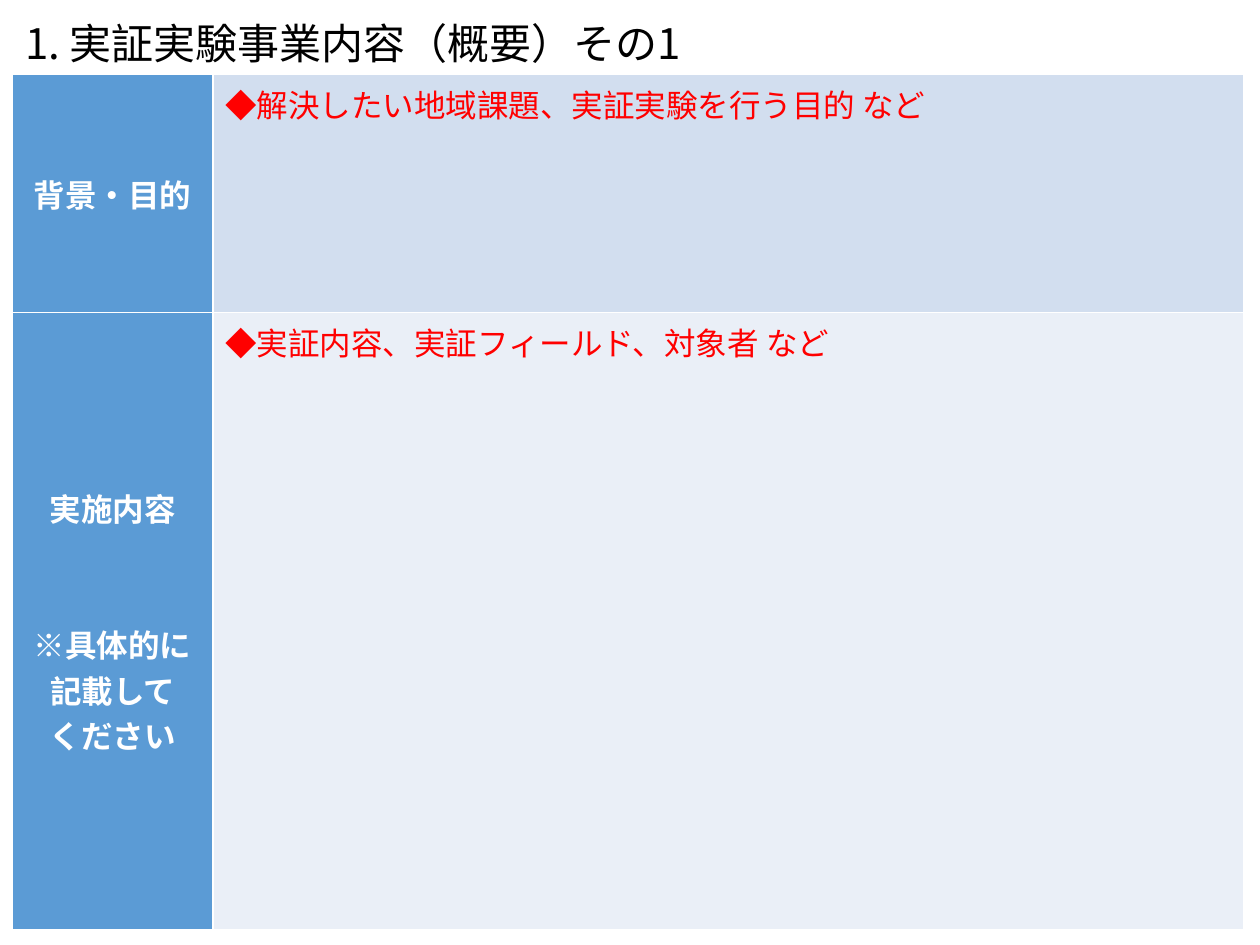
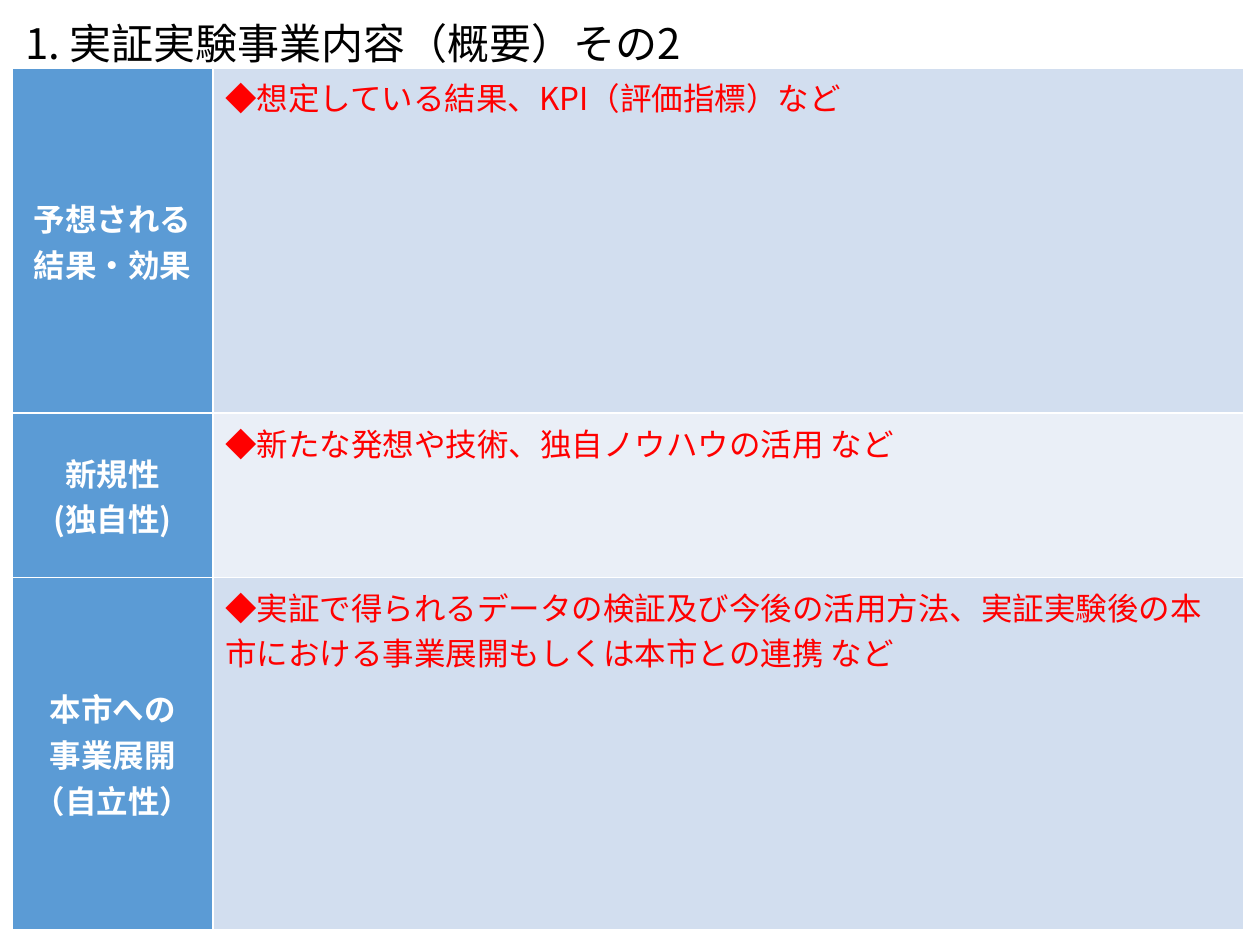
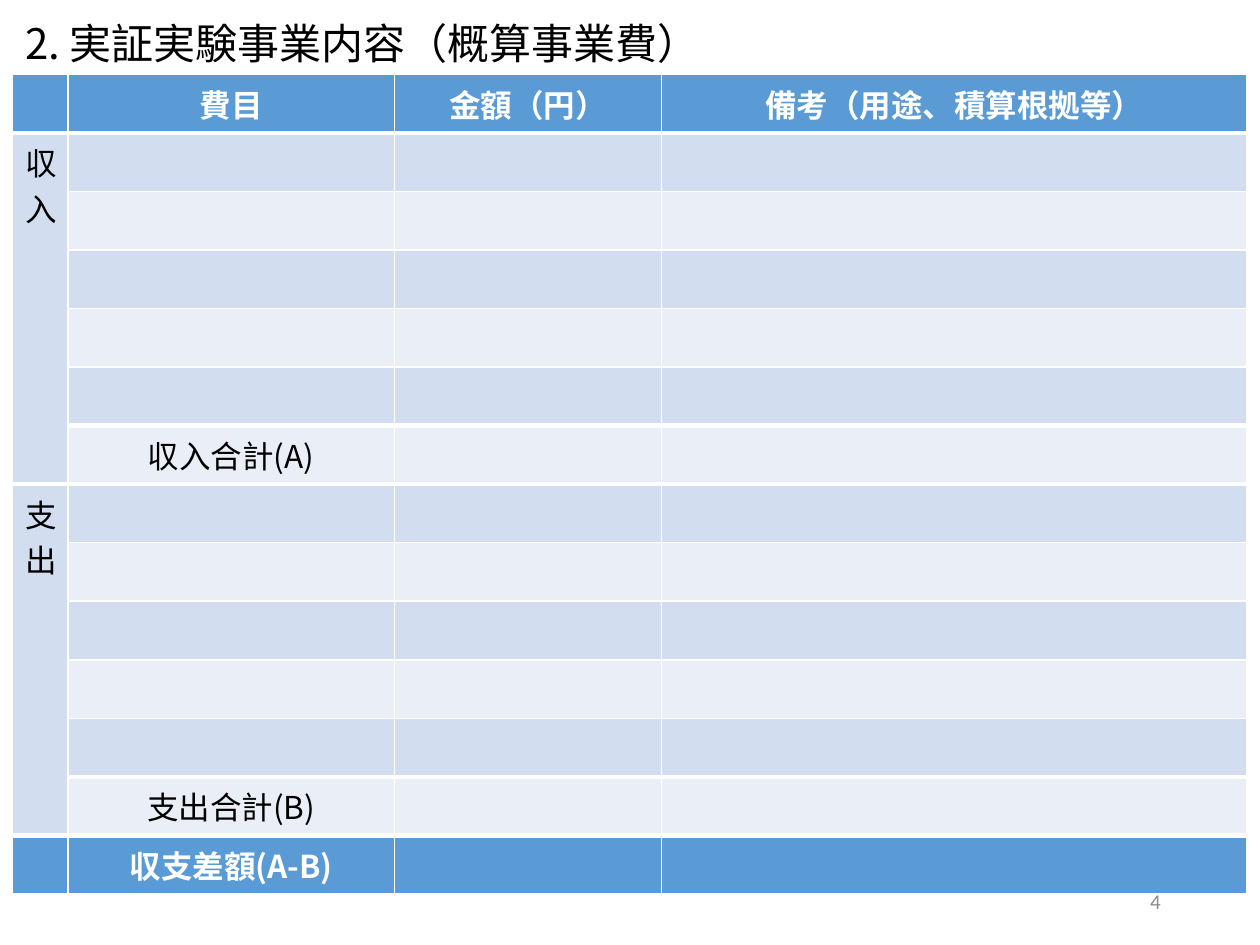
from lxml.etree import SubElement
from pptx import Presentation
from pptx.dml.color import RGBColor
from pptx.enum.text import MSO_ANCHOR as Anchor, PP_ALIGN as Align
from pptx.oxml.ns import qn
from pptx.util import Cm, Pt

BLUE = RGBColor(0x5B, 0x9B, 0xD5)
BAND_DARK = RGBColor(0xD2, 0xDE, 0xEF)
BAND_LIGHT = RGBColor(0xEA, 0xEF, 0xF7)
WHITE = RGBColor(0xFF, 0xFF, 0xFF)
BLACK = RGBColor(0, 0, 0)
RED = RGBColor(0xFF, 0, 0)
GRAY = RGBColor(0x8C, 0x8C, 0x8C)
BODY_FONT = "Noto Sans CJK JP"
NUMBER_FONT = "Calibri"
LEFT_EDGE = Cm(0.25)
THIN, THICK = 1, 3


def style_paragraph(paragraph, size, color, bold=False, align=Align.LEFT, name=BODY_FONT):
    """Set the alignment and the Latin and East Asian font of a paragraph."""
    paragraph.alignment = align
    font = paragraph.font
    font.size, font.bold, font.name = Pt(size), bold, name
    font.color.rgb = color
    defaults = paragraph._p.get_or_add_pPr().find(qn("a:defRPr"))
    SubElement(defaults, qn("a:ea"), typeface=name)


def add_titled_slide(prs, heading):
    """Add a title-only slide with its heading at the top left."""
    slide = prs.slides.add_slide(prs.slide_layouts[5])
    title = slide.shapes.title
    title.left, title.top, title.width, title.height = LEFT_EDGE, Cm(0.23), Cm(17.48), Cm(1.27)
    title.text_frame.text = heading
    title.text_frame.vertical_anchor = Anchor.TOP
    style_paragraph(title.text_frame.paragraphs[0], 24, BLACK)
    return slide


def add_page_number(slide, number):
    """Add the page number at the lower right."""
    footer = slide.shapes.add_textbox(Cm(17.93), Cm(17.65), Cm(5.72), Cm(1.02)).text_frame
    footer.word_wrap = True
    footer.vertical_anchor = Anchor.MIDDLE
    footer.text = number
    style_paragraph(footer.paragraphs[0], 12, GRAY, align=Align.RIGHT, name=NUMBER_FONT)


def add_grid(slide, top, widths, heights):
    """Add an unbanded table with the given column widths and row heights in cm."""
    table = slide.shapes.add_table(
        len(heights), len(widths), LEFT_EDGE, Cm(top), Cm(sum(widths)), Cm(sum(heights))
    ).table
    table.first_row = table.horz_banding = False
    for column, width in zip(table.columns, widths):
        column.width = Cm(width)
    for row, height in zip(table.rows, heights):
        row.height = Cm(height)
    return table


def paint_cell(cell, fill, top=THIN, bottom=THIN):
    """Fill a cell and draw its white borders."""
    cell.fill.solid()
    cell.fill.fore_color.rgb = fill
    properties = cell._tc.get_or_add_tcPr()
    borders = {"a:lnL": THIN, "a:lnR": THIN, "a:lnT": top, "a:lnB": bottom}
    for position, (side, points) in enumerate(borders.items()):
        line = SubElement(properties, qn(side), w=str(Pt(points)))
        SubElement(SubElement(line, qn("a:solidFill")), qn("a:srgbClr"), val=str(WHITE))
        properties.insert(position, line)


def write_cell(cell, text, color, bold=False, align=Align.CENTER):
    """Write table text, one paragraph per line."""
    cell.text = text
    for paragraph in cell.text_frame.paragraphs:
        style_paragraph(paragraph, 18, color, bold, align)


def add_outline_table(slide, top, heights, entries):
    """Add a table of item labels and red writing hints."""
    table = add_grid(slide, top, [4.04, 20.78], heights)
    for index, (label, hint) in enumerate(entries):
        label_cell, hint_cell = table.cell(index, 0), table.cell(index, 1)
        paint_cell(label_cell, BLUE)
        label_cell.vertical_anchor = Anchor.MIDDLE
        write_cell(label_cell, label, WHITE, bold=True)
        paint_cell(hint_cell, BAND_LIGHT if index % 2 else BAND_DARK)
        write_cell(hint_cell, hint, RED, align=Align.LEFT)
    return table


def add_budget_table(slide):
    """Add the income and expense table with its totals."""
    headers = ["", "費目", "金額（円）", "備考（用途、積算根拠等）"]
    groups = [("収入", "収入合計(A)"), ("支出", "支出合計(B)")]
    group_rows = 6
    last = len(groups) * group_rows + 1
    thick_above = {1, 6, 7, 12, 13}
    table = add_grid(slide, 1.5, [1.12, 6.58, 5.38, 11.81], [1.18] * (last + 1))
    for row in range(last + 1):
        band = BLUE if row in (0, last) else BAND_DARK if row % 2 else BAND_LIGHT
        top = THICK if row in thick_above else THIN
        bottom = THICK if row + 1 in thick_above else THIN
        for column in range(len(headers)):
            grouped = column == 0 and 0 < row < last
            if grouped:
                starts, ends = row % group_rows == 1, row % group_rows == 0
                paint_cell(table.cell(row, 0), BAND_DARK,
                           top if starts else THIN, bottom if ends else THIN)
            else:
                paint_cell(table.cell(row, column), band, top, bottom)
    for column, header in enumerate(headers[1:], 1):
        write_cell(table.cell(0, column), header, WHITE, bold=True)
    for index, (group, total) in enumerate(groups):
        first = 1 + index * group_rows
        group_cell = table.cell(first, 0)
        group_cell.merge(table.cell(first + group_rows - 1, 0))
        group_cell._tc.get_or_add_tcPr().set("vert", "eaVert")
        write_cell(group_cell, group, BLACK)
        write_cell(table.cell(first + group_rows - 1, 1), total, BLACK)
    write_cell(table.cell(last, 1), "収支差額(A-B)", WHITE, bold=True)


def main():
    """Build the three slides and save them."""
    prs = Presentation()
    prs.slide_width, prs.slide_height = Cm(25.4), Cm(19.05)

    purpose = add_titled_slide(prs, "1. 実証実験事業内容（概要）その1")
    purpose_table = add_outline_table(purpose, 1.5, [4.8, 12.45], [
        ("背景・目的", "◆解決したい地域課題、実証実験を行う目的 など"),
        ("実施内容\n※具体的に\n記載して\nください", "◆実証内容、実証フィールド、対象者 など"),
    ])
    purpose_table.cell(1, 0).text_frame.paragraphs[1].space_before = Pt(52)

    effects = add_titled_slide(prs, "1. 実証実験事業内容（概要）その2")
    add_outline_table(effects, 1.37, [6.96, 3.31, 7.11], [
        ("予想される結果・効果", "◆想定している結果、KPI（評価指標）など"),
        ("新規性\n(独自性)", "◆新たな発想や技術、独自ノウハウの活用 など"),
        ("本市への\n事業展開\n（自立性）",
         "◆実証で得られるデータの検証及び今後の活用方法、"
         "実証実験後の本市における事業展開もしくは本市との連携 など"),
    ])

    budget = add_titled_slide(prs, "2. 実証実験事業内容（概算事業費）")
    add_page_number(budget, "4")
    add_budget_table(budget)

    prs.save("out.pptx")


if __name__ == "__main__":
    main()
